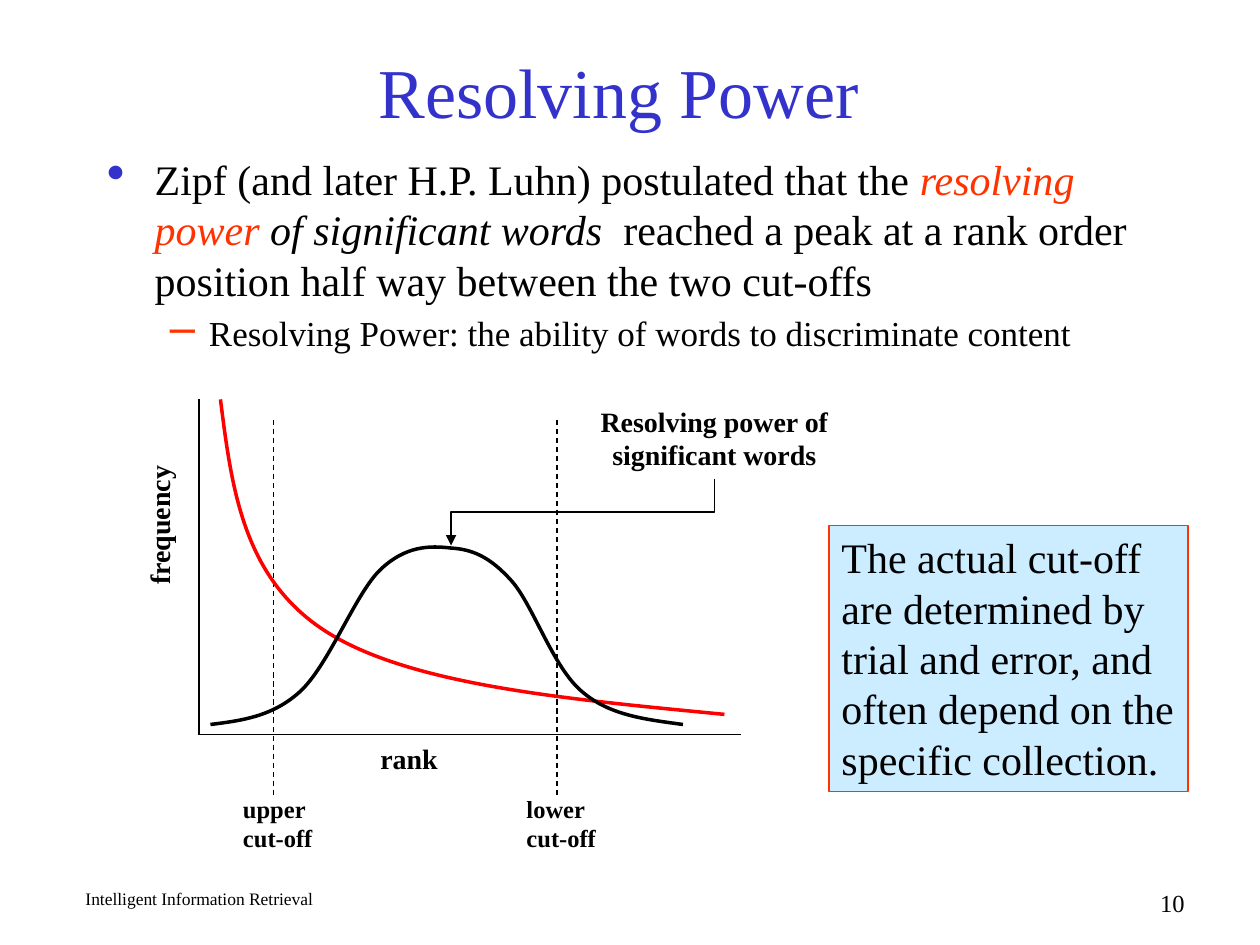
"""Build the slide on the resolving power of significant words."""
from lxml.etree import SubElement
from pptx import Presentation
from pptx.dml.color import RGBColor
from pptx.enum.dml import MSO_LINE
from pptx.enum.shapes import MSO_CONNECTOR as LINK, MSO_SHAPE
from pptx.enum.text import MSO_ANCHOR as ANCHOR, PP_ALIGN as ALIGN
from pptx.oxml.ns import qn
from pptx.util import Inches, Pt

BLACK = RGBColor(0, 0, 0)
BLUE = RGBColor(0x33, 0x33, 0xCC)
ORANGE = RGBColor(0xFF, 0x33, 0x00)
RED = RGBColor(0xFF, 0, 0)
PALE_BLUE = RGBColor(0xCC, 0xEC, 0xFF)
FONT = "Times New Roman"


def write_lines(shape, lines, size, color=BLACK, bold=False, align=ALIGN.LEFT, wrap=False):
    frame = shape.text_frame
    frame.word_wrap = wrap
    frame.text = "\n".join(lines)
    for para in frame.paragraphs:
        para.alignment = align
        para.font.name = FONT
        para.font.size = Pt(size)
        para.font.bold = bold
        para.font.color.rgb = color


def add_line(kind, *ends):
    line = slide.shapes.add_connector(kind, *map(Inches, ends))
    line.line.color.rgb = BLACK
    line.line.width = Pt(0.75)
    SubElement(line.element.spPr, qn("a:effectLst"))
    return line


deck = Presentation()
deck.slide_width, deck.slide_height = Inches(10), Inches(7.5)
slide = deck.slides.add_slide(deck.slide_layouts[5])

title = slide.shapes.title
title.left, title.top = Inches(0.66), Inches(0.34)
title.width, title.height = Inches(8.5), Inches(0.75)
title.text_frame.vertical_anchor = ANCHOR.MIDDLE
write_lines(title, ["Resolving Power"], 40, BLUE, align=ALIGN.CENTER, wrap=True)

body = slide.shapes.add_textbox(Inches(0.75), Inches(1.17), Inches(8.5), Inches(1.83))
body.text_frame.word_wrap = True
points = [
    (0, 24, 0.38, 0.38, "•", BLUE, 125, [
        ("Zipf (and later H.P. Luhn) postulated that the ", BLACK, False),
        ("resolving power", ORANGE, True),
        (" of significant words", BLACK, True),
        ("  reached a peak at a rank order position half way between the two cut-offs",
         BLACK, False)]),
    (1, 20, 0.81, 0.31, "–", ORANGE, 130, [
        ("Resolving Power: the ability of words to discriminate content", BLACK, False)]),
]
for level, size, margin, hang, mark, mark_color, mark_percent, spans in points:
    para = body.text_frame.paragraphs[0] if level == 0 else body.text_frame.add_paragraph()
    para.level = level
    para.space_before = Pt(size * 0.2)
    props = para._p.get_or_add_pPr()
    props.set("marL", str(Inches(margin)))
    props.set("indent", str(-Inches(hang)))
    SubElement(SubElement(props, qn("a:buClr")), qn("a:srgbClr"), val=str(mark_color))
    SubElement(props, qn("a:buSzPct"), val=str(mark_percent * 1000))
    SubElement(props, qn("a:buChar"), char=mark)
    para.font.name = FONT
    para.font.size = Pt(size)
    for text, color, italic in spans:
        span = para.add_run()
        span.text = text
        span.font.color.rgb = color
        span.font.italic = italic

add_line(LINK.STRAIGHT, 1.58, 3.17, 1.58, 5.83)
add_line(LINK.STRAIGHT, 1.58, 5.83, 5.88, 5.83)
for cutoff in (2.17, 4.42):
    add_line(LINK.STRAIGHT, cutoff, 3.33, cutoff, 6.33).line.dash_style = MSO_LINE.DASH

curves = [
    (RED, [
        (1.75, 3.17), (1.84, 3.88), (1.93, 4.6), (2.6, 5.02),
        (3.27, 5.44), (4.51, 5.55), (5.75, 5.67)]),
    (BLACK, [
        (1.67, 5.75), (1.91, 5.72), (2.16, 5.69), (2.38, 5.49),
        (2.61, 5.28), (2.82, 4.71), (3.02, 4.52),
        (3.22, 4.33), (3.41, 4.33), (3.58, 4.35),
        (3.75, 4.36), (3.89, 4.42), (4.06, 4.61),
        (4.23, 4.8), (4.39, 5.3), (4.62, 5.49),
        (4.84, 5.68), (5.13, 5.71), (5.42, 5.75)]),
]
for color, knots in curves:
    start, *rest = [(Inches(x), Inches(y)) for x, y in knots]
    builder = slide.shapes.build_freeform(*start)
    builder.add_line_segments(rest, close=False)
    curve = builder.convert_to_shape()
    curve.shadow.inherit = False
    curve.fill.background()
    curve.line.color.rgb = color
    curve.line.width = Pt(2)
    outline = next(curve.element.iter(qn("a:path")))
    segments = outline.findall(qn("a:lnTo"))
    for first in range(0, len(segments), 3):
        bezier = SubElement(outline, qn("a:cubicBezTo"))
        for segment in segments[first:first + 3]:
            bezier.append(segment[0])
            outline.remove(segment)

pointer = add_line(LINK.ELBOW, 4.36, 3.02, 4.89, 5.11)
pointer.element.spPr.find(qn("a:xfrm")).set("rot", str(90 * 60000))
SubElement(pointer.line._get_or_add_ln(), qn("a:tailEnd"), type="triangle")

labels = [
    (2.92, 5.84, 0.66, 0.37, ["rank"], 16, True, ALIGN.LEFT, 0),
    (0.69, 3.98, 1.15, 0.37, ["frequency"], 16, True, ALIGN.LEFT, 270),
    (4.66, 3.16, 2.02, 0.64, ["Resolving power of", "significant words"], 16, True,
     ALIGN.CENTER, 0),
    (1.83, 6.25, 0.75, 0.57, ["upper", "cut-off"], 14, True, ALIGN.LEFT, 0),
    (4.08, 6.25, 0.75, 0.57, ["lower", "cut-off"], 14, True, ALIGN.LEFT, 0),
    (0.58, 7, 3.75, 0.25, ["Intelligent Information Retrieval"], 10, False, ALIGN.LEFT, 0),
    (7.42, 7, 2.08, 0.25, ["10"], 14, False, ALIGN.RIGHT, 0),
]
for left, top, width, height, lines, size, bold, align, angle in labels:
    label = slide.shapes.add_textbox(*map(Inches, (left, top, width, height)))
    if angle:
        label.rotation = angle
    write_lines(label, lines, size, bold=bold, align=align, wrap=not bold)

note = slide.shapes.add_shape(
    MSO_SHAPE.RECTANGLE, Inches(6.58), Inches(4.17), Inches(2.85), Inches(2.11))
note.shadow.inherit = False
note.fill.solid()
note.fill.fore_color.rgb = PALE_BLUE
note.line.color.rgb = ORANGE
note.line.width = Pt(0.75)
note.text_frame.vertical_anchor = ANCHOR.TOP
write_lines(note, ["The actual cut-off", "are determined by", "trial and error, and",
                   "often depend on the", "specific collection."], 24)

deck.save("out.pptx")
